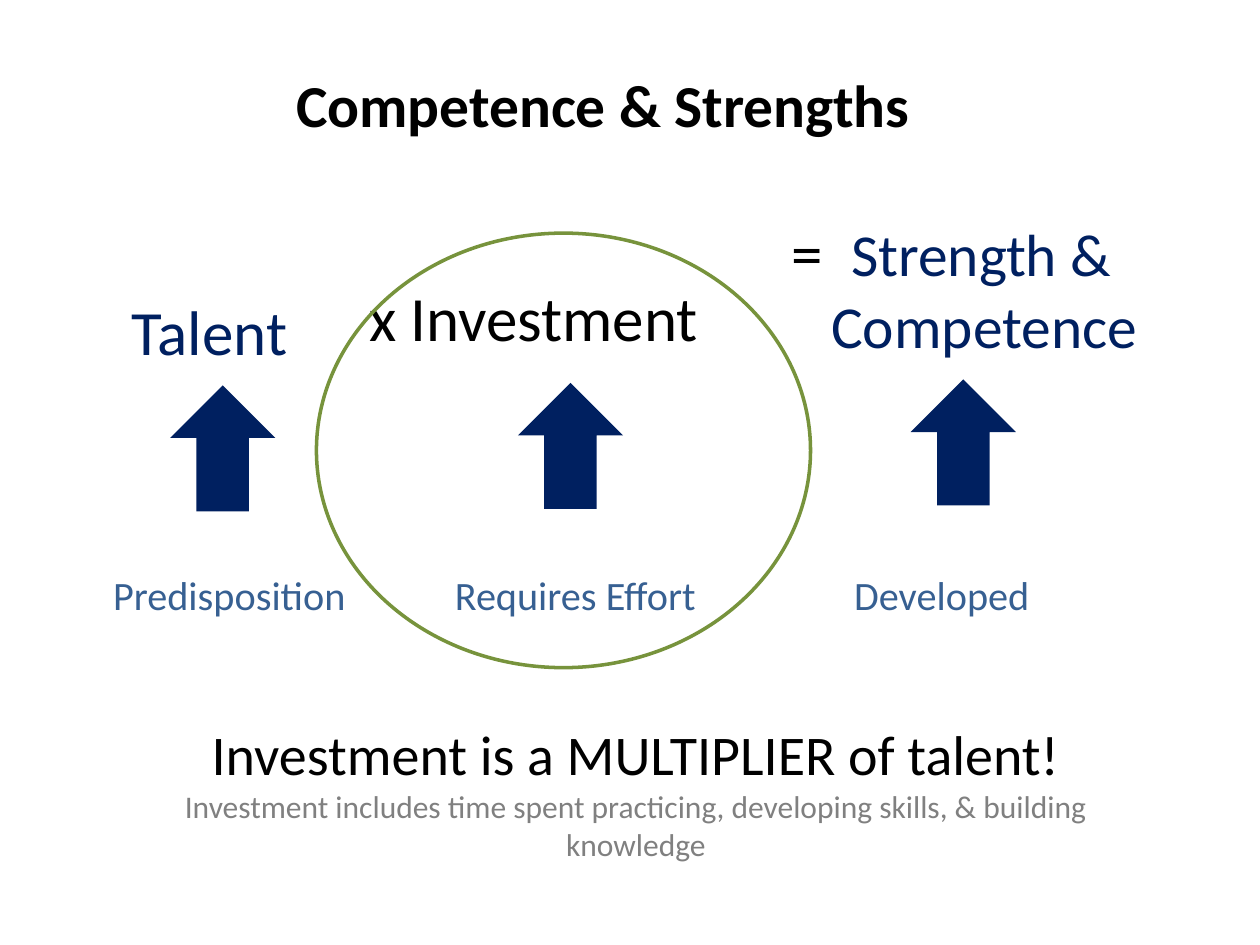
from pptx import Presentation
from pptx.dml.color import RGBColor
from pptx.enum.shapes import MSO_SHAPE
from pptx.enum.text import MSO_ANCHOR, PP_ALIGN
from pptx.util import Cm, Pt

ARROW = MSO_SHAPE.UP_ARROW
OVAL = MSO_SHAPE.OVAL
TOP = MSO_ANCHOR.TOP
LEFT = PP_ALIGN.LEFT
MID = PP_ALIGN.CENTER
NAVY = RGBColor(0x00, 0x20, 0x60)
BLUE = RGBColor(0x37, 0x60, 0x92)
GREEN = RGBColor(0x77, 0x93, 0x3C)
GRAY = RGBColor(0x80, 0x80, 0x80)
BLACK = RGBColor(0, 0, 0)


def add_run(para, text, size, color, bold=False):
    run = para.add_run()
    run.text = text
    run.font.name = "Calibri"
    run.font.size = Pt(size)
    run.font.bold = bold
    run.font.color.rgb = color


def add_box(x, y, w, h, lines, align=LEFT):
    box = slide.shapes.add_textbox(Cm(x), Cm(y), Cm(w), Cm(h))
    frame = box.text_frame
    frame.word_wrap = True
    for i, runs in enumerate(lines):
        para = frame.add_paragraph() if i else frame.paragraphs[0]
        para.alignment = align
        for run in runs:
            add_run(para, *run)
    return frame


deck = Presentation()
deck.slide_width = Cm(25.4)
deck.slide_height = Cm(19.05)
slide = deck.slides.add_slide(deck.slide_layouts[5])

title = slide.shapes.title
title.left, title.top = Cm(0), Cm(1.24)
title.width, title.height = Cm(24.31), Cm(2.26)
title.text_frame.vertical_anchor = TOP
head = title.text_frame.paragraphs[0]
head.alignment = MID
add_run(head, "Competence & Strengths", 34, BLACK, True)

for x, y in [(3.43, 7.77), (10.44, 7.72), (18.36, 7.65)]:
    arrow = slide.shapes.add_shape(ARROW, Cm(x), Cm(y), Cm(2.12), Cm(2.54))
    arrow.shadow.inherit = False
    arrow.fill.solid()
    arrow.fill.fore_color.rgb = NAVY
    arrow.line.fill.background()

for x, w, text in [
    (2.03, 6.27, "Predisposition"),
    (8.92, 5.92, "Requires Effort"),
    (16.97, 4.65, "Developed"),
]:
    add_box(x, 11.38, w, 1.25, [[(text, 23, BLUE)]])

talent = add_box(2.41, 5.77, 3.68, 1.8, [[("Talent", 36, NAVY)]])
talent.word_wrap = False
add_box(7.19, 5.49, 9.09, 1.96, [[("x Investment", 36, BLACK)]])

result = add_box(15.7, 4.17, 8.26, 4.27, [
    [("=\t", 36, BLACK), ("Strength &", 34, NAVY)],
    [("Competence", 34, NAVY)],
])
for para, left, first in zip(result.paragraphs, (1.21, 0.81), (-1.21, 0)):
    props = para._p.get_or_add_pPr()
    props.set("marL", str(Cm(left)))
    props.set("indent", str(Cm(first)))

ring = slide.shapes.add_shape(OVAL, Cm(6.38), Cm(4.7), Cm(9.96), Cm(8.76))
ring.shadow.inherit = False
ring.fill.background()
ring.line.color.rgb = GREEN
ring.line.width = Pt(2)

add_box(2.24, 14.38, 21.16, 3.15, [
    [("Investment is a MULTIPLIER of talent!", 32, BLACK)],
    [("Investment includes time spent practicing, developing skills, "
      "& building knowledge", 18, GRAY)],
], MID)

deck.save("out.pptx")
